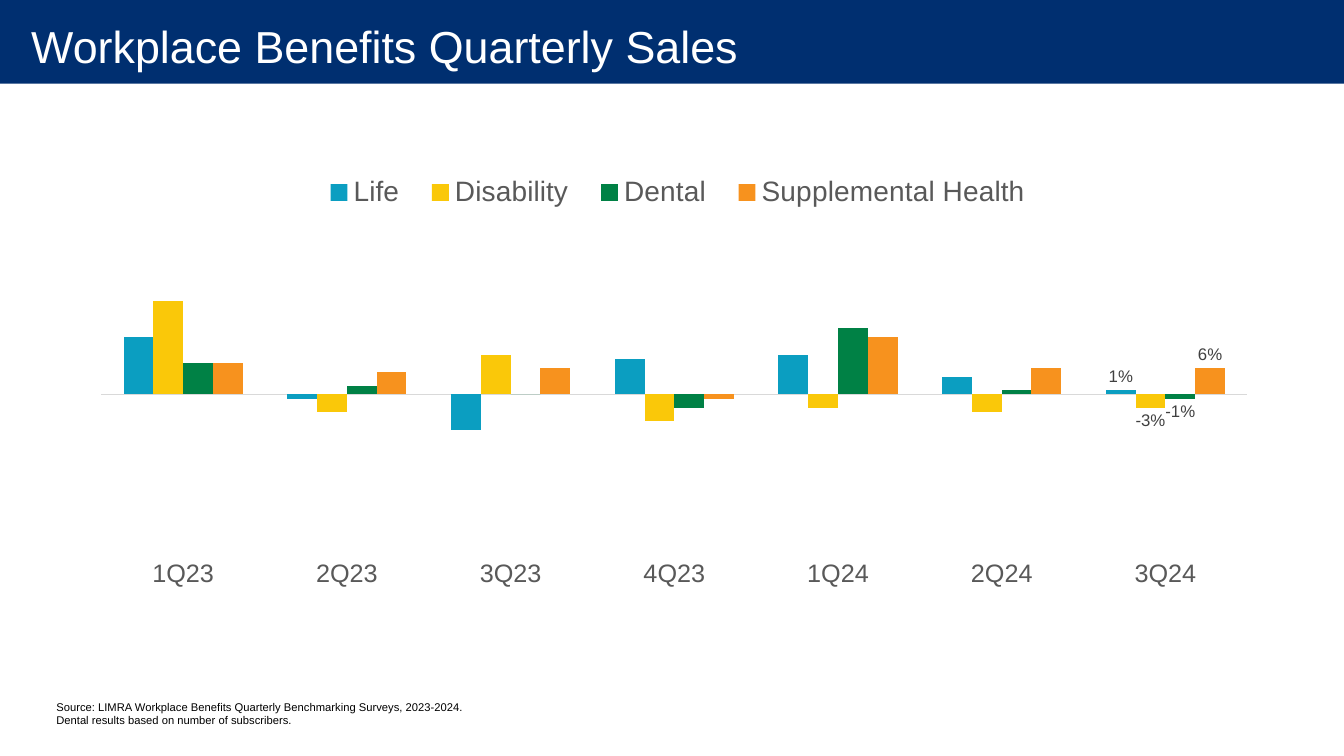
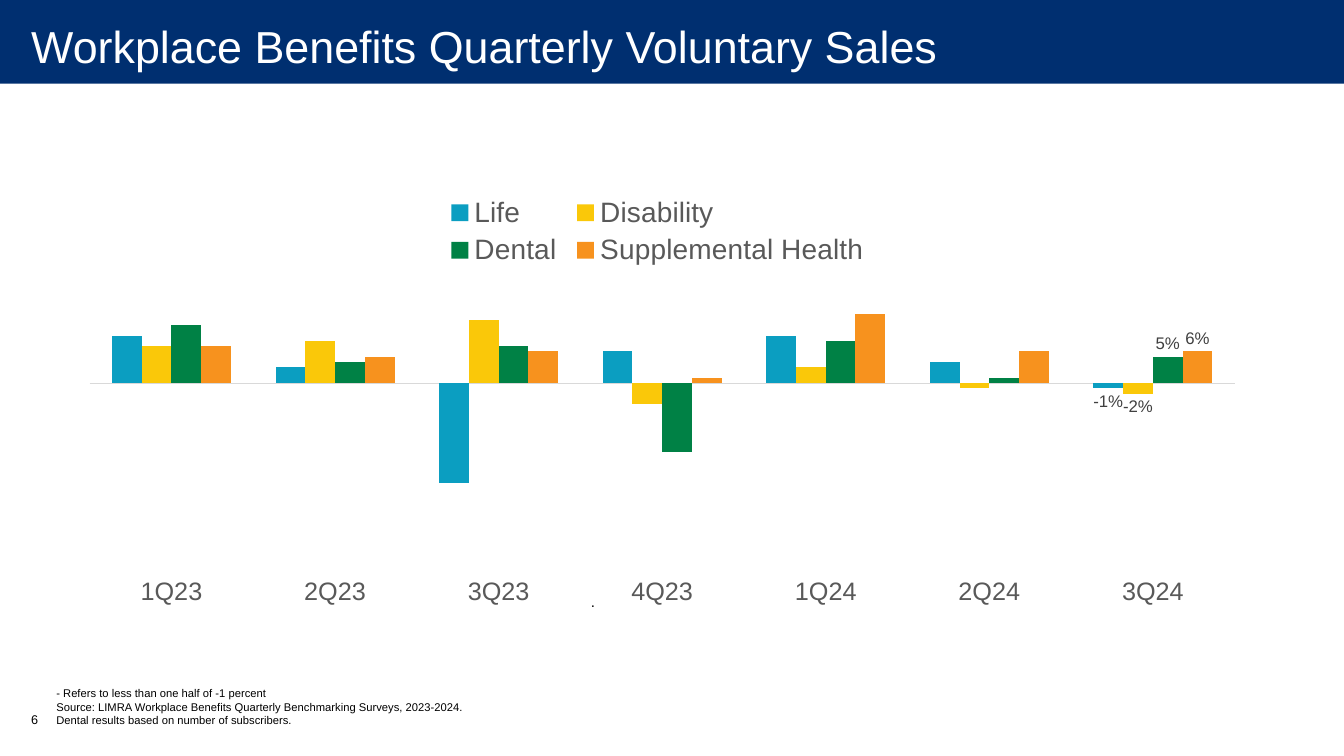
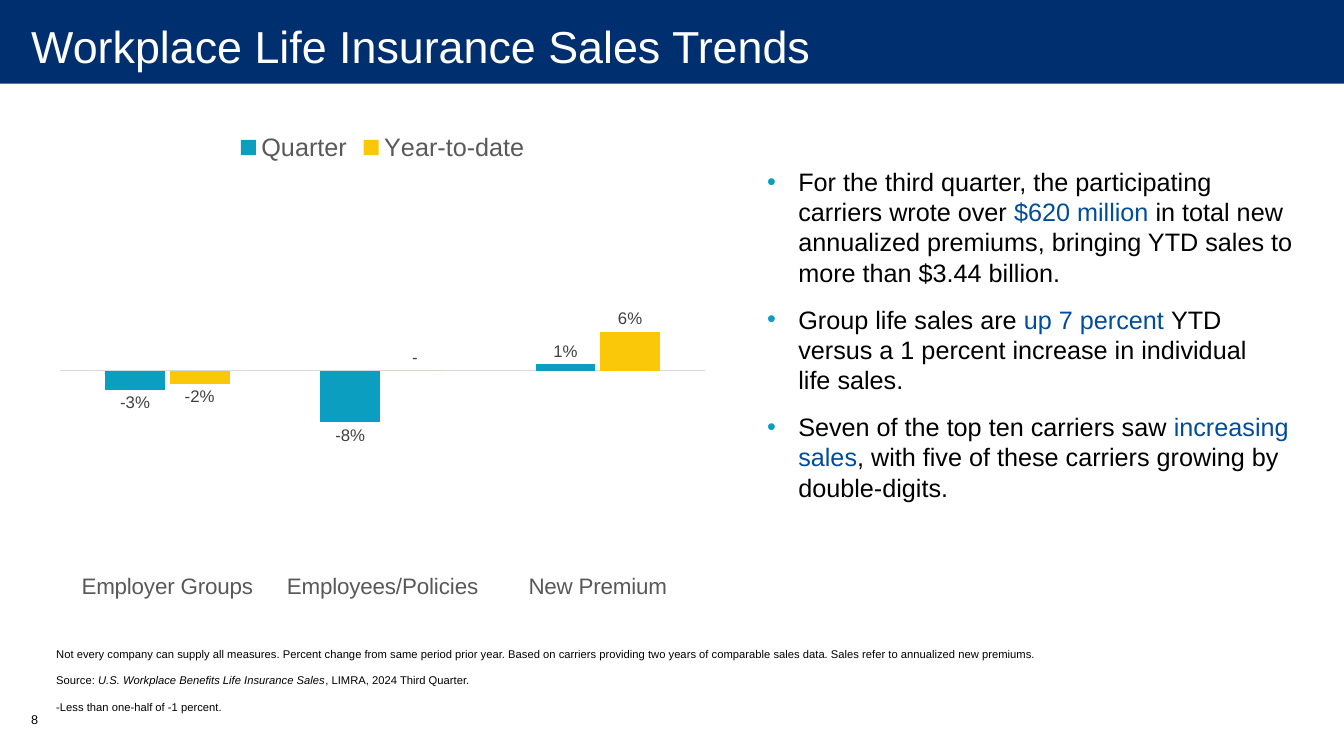
from lxml import etree
from pptx import Presentation
from pptx.chart.data import CategoryChartData
from pptx.dml.color import RGBColor
from pptx.enum.chart import XL_CHART_TYPE as CT, XL_LABEL_POSITION as LP, XL_LEGEND_POSITION as LG
from pptx.enum.chart import XL_TICK_LABEL_POSITION as TLP, XL_TICK_MARK as TM
from pptx.enum.shapes import MSO_SHAPE
from pptx.enum.text import MSO_ANCHOR
from pptx.oxml.ns import qn
from pptx.util import Inches, Pt

FONT = "Arial"
COLORS = {
    "band": "002F70", "white": "FFFFFF", "text": "000000", "accent": "004C9D",
    "axis_text": "595959", "axis_line": "D9D9D9", "label": "404040",
    "blue": "0B9EC1", "yellow": "FAC809", "green": "008145", "orange": "F7921E",
}
SERIES_COLORS = ["blue", "yellow", "green", "orange"]
QUARTERS = ["1Q23", "2Q23", "3Q23", "4Q23", "1Q24", "2Q24", "3Q24"]
SURVEY_NOTES = [
    "Source: LIMRA Workplace Benefits Quarterly Benchmarking Surveys, 2023-2024.",
    "Dental results based on number of subscribers.",
]
SALES = {
    "Life": [0.13, -0.01, -0.08, 0.08, 0.09, 0.04, 0.01],
    "Disability": [0.21, -0.04, 0.09, -0.06, -0.03, -0.04, -0.03],
    "Dental": [0.07, 0.02, 0, -0.03, 0.15, 0.01, -0.01],
    "Supplemental Health": [0.07, 0.05, 0.06, -0.01, 0.13, 0.06, 0.06],
}
VOLUNTARY_SALES = {
    "Life": [0.09, 0.03, -0.19, 0.06, 0.09, 0.04, -0.01],
    "Disability": [0.07, 0.08, 0.12, -0.04, 0.03, -0.01, -0.02],
    "Dental": [0.11, 0.04, 0.07, -0.13, 0.08, 0.01, 0.05],
    "Supplemental Health": [0.07, 0.05, 0.06, 0.01, 0.13, 0.06, 0.06],
}
LIFE_TRENDS = {
    "Quarter": [-0.03, -0.08, 0.01],
    "Year-to-date": [-0.02, 0, 0.06],
}
LIFE_POINTS = [
    [("For the third quarter, the participating carriers wrote over ", "text"),
     ("$620 million ", "accent"),
     ("in total new annualized premiums, bringing YTD sales to more than $3.44 billion.", "text")],
    [("Group life sales are ", "text"), ("up 7 percent ", "accent"),
     ("YTD versus a 1 percent increase in individual\nlife sales.", "text")],
    [("Seven of the top ten carriers saw ", "text"), ("increasing sales", "accent"),
     (", with five of these carriers growing by double-digits.", "text")],
]


def rgb(name):
    return RGBColor.from_string(COLORS[name])


def style(font, size, color="text"):
    font.name = FONT
    font.size = Pt(size)
    font.color.rgb = rgb(color)


def add_text(p, text, size, color="text", italic=False):
    for i, line in enumerate(text.split("\n")):
        if i:
            p.add_line_break()
        r = p.add_run()
        r.text = line
        style(r.font, size, color)
        if italic:
            r.font.italic = True


def add_box(s, x, y, w, h, anchor=MSO_ANCHOR.TOP):
    tf = s.shapes.add_textbox(Inches(x), Inches(y), Inches(w), Inches(h)).text_frame
    tf.word_wrap = True
    tf.vertical_anchor = anchor
    return tf


def next_paragraph(tf, i, gap=0):
    if i == 0:
        return tf.paragraphs[0]
    p = tf.add_paragraph()
    p.space_before = Pt(gap)
    return p


def add_slide(prs, title, number=None):
    s = prs.slides.add_slide(prs.slide_layouts[6])
    sp = s.shapes.add_shape(MSO_SHAPE.RECTANGLE, 0, Inches(-0.03), prs.slide_width, Inches(0.86))
    sp.shadow.inherit = False
    sp.fill.solid()
    sp.fill.fore_color.rgb = rgb("band")
    sp.line.fill.background()
    tf = add_box(s, 0.01, -0.03, 13.32, 0.97, MSO_ANCHOR.MIDDLE)
    tf.margin_left, tf.margin_right = Inches(0.3), Inches(0.2)
    tf.margin_top = tf.margin_bottom = 0
    add_text(tf.paragraphs[0], title, 32, "white")
    if number:
        add_text(add_box(s, 0.21, 7.01, 0.49, 0.4).paragraphs[0], number, 9)
    return s


def add_notes(s, notes, y=6.54, w=5.85, gap=0):
    tf = add_box(s, 0.46, y, w, 0.72, MSO_ANCHOR.BOTTOM)
    for i, note in enumerate(notes):
        p = next_paragraph(tf, i, gap)
        for j, part in enumerate(note.split("*")):
            add_text(p, part, 8, italic=j % 2 == 1)


def add_bullets(s, x, y, w, h, items):
    tf = add_box(s, x, y, w, h)
    for i, item in enumerate(items):
        p = next_paragraph(tf, i, 12)
        pPr = p._p.get_or_add_pPr()
        pPr.set("marL", str(Inches(0.31)))
        pPr.set("indent", str(-Inches(0.31)))
        bu = etree.SubElement(pPr, qn("a:buClr"))
        etree.SubElement(bu, qn("a:srgbClr"), val=COLORS["blue"])
        etree.SubElement(pPr, qn("a:buFont"), typeface=FONT)
        etree.SubElement(pPr, qn("a:buChar"), char="•")
        for text, color in item:
            add_text(p, text, 18, color)


def set_layout(parent, index, box, inner=False):
    for old in parent.findall(qn("c:layout")):
        parent.remove(old)
    layout = etree.Element(qn("c:layout"))
    manual = etree.SubElement(layout, qn("c:manualLayout"))
    values = [("layoutTarget", "inner")] if inner else []
    values += [("xMode", "edge"), ("yMode", "edge"), *zip("xywh", box)]
    for tag, val in values:
        etree.SubElement(manual, qn("c:" + tag), val=str(val))
    parent.insert(index, layout)


def add_columns(s, box, cats, data, low, high, cat_size, legend_size, gap=150, overlap=0):
    cd = CategoryChartData(number_format="0%")
    cd.categories = cats
    for name, vals in data.items():
        cd.add_series(name, vals)
    chart = s.shapes.add_chart(CT.COLUMN_CLUSTERED, *map(Inches, box), cd).chart
    style(chart.font, 10)
    chart.has_title = False
    chart.has_legend = True
    chart.legend.position = LG.TOP
    chart.legend.include_in_layout = False
    style(chart.legend.font, legend_size, "axis_text")
    va, ca = chart.value_axis, chart.category_axis
    va.visible = False
    va.has_major_gridlines = False
    va.minimum_scale, va.maximum_scale = low, high
    ca.tick_label_position = TLP.LOW
    ca.major_tick_mark = ca.minor_tick_mark = TM.NONE
    style(ca.tick_labels.font, cat_size, "axis_text")
    ca.format.line.color.rgb = rgb("axis_line")
    ca.format.line.width = Pt(0.75)
    plot = chart.plots[0]
    plot.gap_width, plot.overlap = gap, overlap
    plot.vary_by_categories = False
    for ser, color in zip(plot.series, SERIES_COLORS):
        ser.invert_if_negative = False
        ser.format.fill.solid()
        ser.format.fill.fore_color.rgb = rgb(color)
    return chart


def label_last(chart):
    for ser in chart.plots[0].series:
        ser.data_labels.show_value = False
        label = ser.points[len(QUARTERS) - 1].data_label
        style(label.font, 12, "label")
        label.position = LP.OUTSIDE_END


def label_all(chart):
    for ser in chart.plots[0].series:
        labels = ser.data_labels
        labels.show_value = True
        labels.position = LP.OUTSIDE_END
        style(labels.font, 12, "label")


def add_quarter_chart(s, box, data, plot_box, legend_box):
    chart = add_columns(s, box, QUARTERS, data, -0.35, 0.25, 18, 20)
    label_last(chart)
    set_layout(chart._chartSpace.chart.plotArea, 0, plot_box, inner=True)
    set_layout(chart.legend._element, 1, legend_box)


def add_sales(prs):
    s = add_slide(prs, "Workplace Benefits Quarterly Sales")
    add_quarter_chart(s, (0.83, 1.33, 11.67, 4.84), SALES,
                      (0.015, 0.307, 0.974, 0.545), (0.19, 0.06, 0.63, 0.12))
    add_notes(s, SURVEY_NOTES)


def add_voluntary_sales(prs):
    s = add_slide(prs, "Workplace Benefits Quarterly Voluntary Sales", "6")
    add_notes(s, ["- Refers to less than one half of -1 percent"] + SURVEY_NOTES)
    add_quarter_chart(s, (0.75, 1.8, 11.66, 4.74), VOLUNTARY_SALES,
                      (0.012, 0.146, 0.974, 0.663), (0.31, 0.02, 0.37, 0.17))
    tf = add_box(s, 5.86, 5.5, 0.5, 0.56, MSO_ANCHOR.BOTTOM)
    tf.margin_left = tf.margin_right = tf.margin_top = tf.margin_bottom = 0
    p = tf.paragraphs[0]
    p.line_spacing = 1.2
    add_text(p, ".", 10.7)


def add_life_trends(prs):
    s = add_slide(prs, "Workplace Life Insurance Sales Trends", "8")
    add_notes(s, [
        "Not every company can supply all measures. Percent change from same period prior year. "
        "Based on carriers providing two years of comparable sales data. "
        "Sales refer to annualized new premiums.",
        "Source: *U.S. Workplace Benefits Life Insurance Sales*, LIMRA, 2024 Third Quarter.",
        "-Less than one-half of -1 percent.",
    ], y=6.41, w=9.94, gap=9.5)
    chart = add_columns(s, (0.46, 1.2, 6.67, 4.84),
                        ["Employer Groups", "Employees/Policies", "New Premium"],
                        LIFE_TRENDS, -0.3, 0.3, 16, 18, 152, -8)
    label_all(chart)
    label = chart.plots[0].series[1].points[1].data_label
    p = label.text_frame.paragraphs[0]
    add_text(p, "-", 12, "label")
    label.position = LP.OUTSIDE_END
    add_bullets(s, 7.51, 1.6, 5.47, 3.47, LIFE_POINTS)


def main():
    prs = Presentation()
    prs.slide_width, prs.slide_height = Inches(13.33), Inches(7.5)
    add_sales(prs)
    add_voluntary_sales(prs)
    add_life_trends(prs)
    prs.save("out.pptx")


if __name__ == "__main__":
    main()
